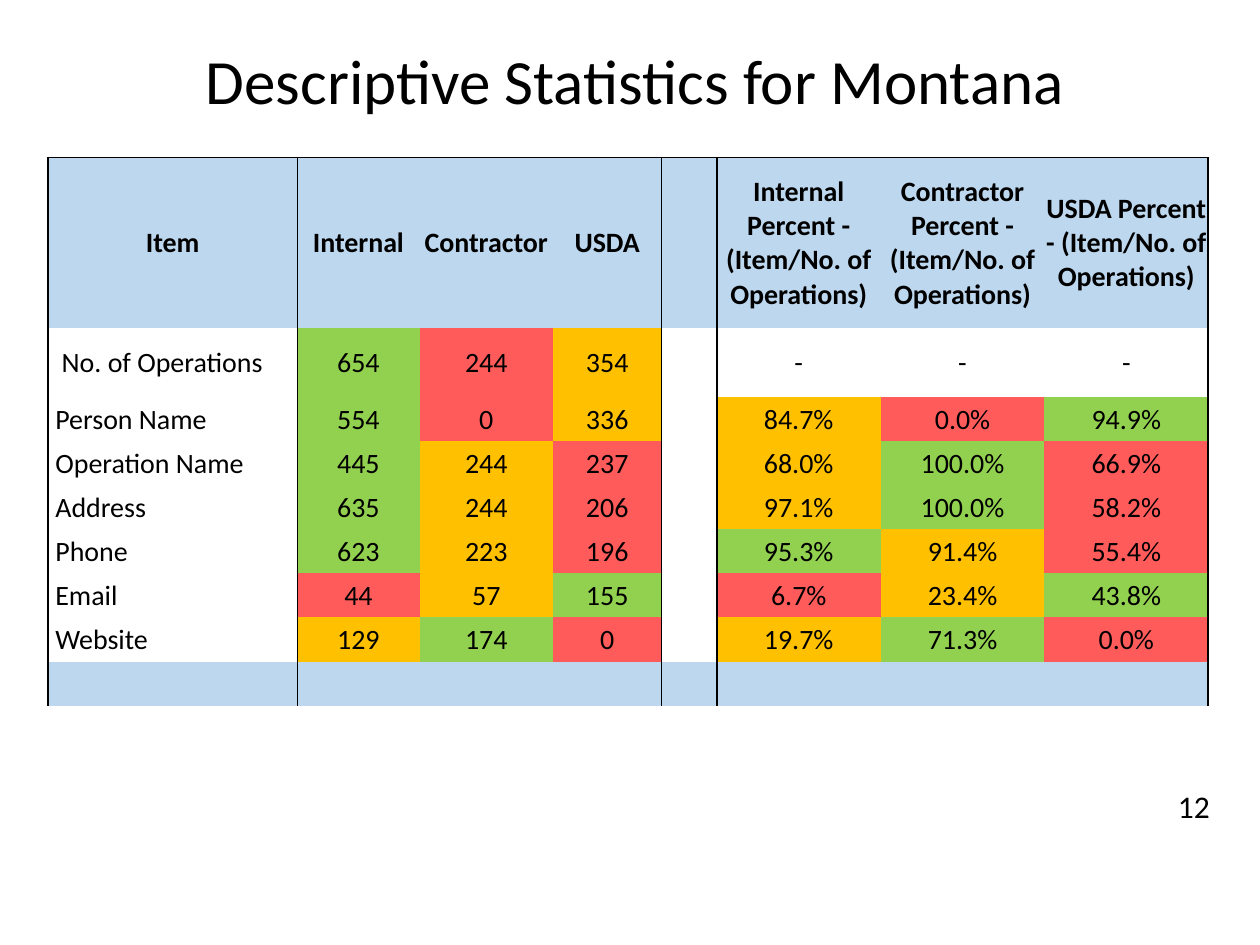
from pptx import Presentation
from pptx.dml.color import RGBColor as RGB
from pptx.enum.text import MSO_ANCHOR as Anchor, PP_ALIGN as Align
from pptx.oxml import parse_xml
from pptx.oxml.ns import nsdecls
from pptx.util import Inches, Pt

BLACK = RGB(0, 0, 0)
BLUE = RGB(0xBD, 0xD7, 0xEE)
GREEN = RGB(0x92, 0xD0, 0x50)
AMBER = RGB(0xFF, 0xC0, 0x00)
RED = RGB(0xFF, 0x5B, 0x5B)
UNIT = Inches(0.01)

WIDTHS = [198, 97, 106, 86, 44, 130, 130, 130]
HEIGHTS = [135, 55] + [35] * 7
NAMES = ["Internal", "Contractor", "USDA"]
COUNTS = {
    "No. of Operations": (654, 244, 354),
    "Person Name": (554, 0, 336),
    "Operation Name": (445, 244, 237),
    "Address": (635, 244, 206),
    "Phone": (623, 223, 196),
    "Email": (44, 57, 155),
    "Website": (129, 174, 0),
}
EDGES = {0: 1, 1: 0.5, 4: 1, 5: 1, 8: 1}


def rank(vals):
    order = sorted(vals)
    return [(RED, AMBER, GREEN)[order.index(v)] for v in vals]


def grid():
    heads = [f"{name} Percent - (Item/No. of Operations)" for name in NAMES]
    yield ["Item", *NAMES, "", *heads], [BLUE] * 8
    base = COUNTS["No. of Operations"]
    for name, vals in COUNTS.items():
        if vals == base:
            rates, tints = ["-"] * 3, [None] * 3
        else:
            shares = [v / b for v, b in zip(vals, base)]
            rates, tints = [f"{s:.1%}" for s in shares], rank(shares)
        yield [name, *map(str, vals), "", *rates], [None, *rank(vals), None, *tints]
    yield [""] * 8, [BLUE] * 8


class Deck:
    font = {"name": "Calibri", "bold": False}
    inset = {"margin_left": 1, "margin_right": 1, "margin_top": 1, "margin_bottom": 0}

    def __init__(self):
        self.prs = Presentation()
        self.prs.slide_width, self.prs.slide_height = 1000 * UNIT, 750 * UNIT
        self.slide = self.prs.slides.add_slide(self.prs.slide_layouts[5])

    def words(self, frame, text, size, align=Align.LEFT, **form):
        para = frame.paragraphs[0]
        para.alignment = align
        run = para.add_run()
        run.text = text
        run.font.color.rgb = BLACK
        for key, val in {**self.font, "size": Pt(size), **form}.items():
            setattr(run.font, key, val)

    def title(self, text, *box):
        shape = self.slide.shapes.title
        for key, val in zip(("left", "top", "width", "height"), box):
            setattr(shape, key, val * UNIT)
        shape.text_frame.vertical_anchor = Anchor.MIDDLE
        self.words(shape.text_frame, text, 36, Align.CENTER)

    def label(self, text, *box):
        frame = self.slide.shapes.add_textbox(*(v * UNIT for v in box)).text_frame
        frame.word_wrap = True
        self.words(frame, text, 18)

    def edge(self, cell, side, width):
        fill = '<a:solidFill><a:srgbClr val="000000"/></a:solidFill>' if width else "<a:noFill/>"
        cell._tc.get_or_add_tcPr().append(parse_xml(
            f'<a:ln{side} {nsdecls("a")} w="{Pt(width)}">{fill}</a:ln{side}>'))

    def cell(self, cell, text, tint, row, col):
        sides = {"L": EDGES.get(col, 0), "R": EDGES.get(col + 1, 0),
                 "T": 0 if row else 1, "B": 0}
        for side, width in sides.items():
            self.edge(cell, side, width)
        if tint:
            cell.fill.solid()
            cell.fill.fore_color.rgb = tint
        else:
            cell.fill.background()
        for key, val in self.inset.items():
            setattr(cell, key, val * UNIT)
        cell.vertical_anchor = Anchor.MIDDLE
        item = row and not col
        if item:
            cell.margin_left = (11 if row == 1 else 6) * UNIT
        if text:
            align = Align.LEFT if item else Align.CENTER
            self.words(cell.text_frame, text, 16, align, bold=not row)

    def table(self, rows, left, top):
        size = sum(WIDTHS) * UNIT, sum(HEIGHTS) * UNIT
        table = self.slide.shapes.add_table(
            len(HEIGHTS), len(WIDTHS), left * UNIT, top * UNIT, *size).table
        table.first_row = table.horz_banding = False
        for col, width in zip(table.columns, WIDTHS):
            col.width = width * UNIT
        for row, height in zip(table.rows, HEIGHTS):
            row.height = height * UNIT
        for r, (texts, tints) in enumerate(rows):
            for c, (text, tint) in enumerate(zip(texts, tints)):
                self.cell(table.cell(r, c), text, tint, r, c)


def main():
    deck = Deck()
    deck.table(grid(), 38, 125)
    deck.title("Descriptive Statistics for Montana", 83, 17, 842, 92)
    deck.label("12", 925, 620, 50, 40)
    deck.prs.save("out.pptx")


if __name__ == "__main__":
    main()
